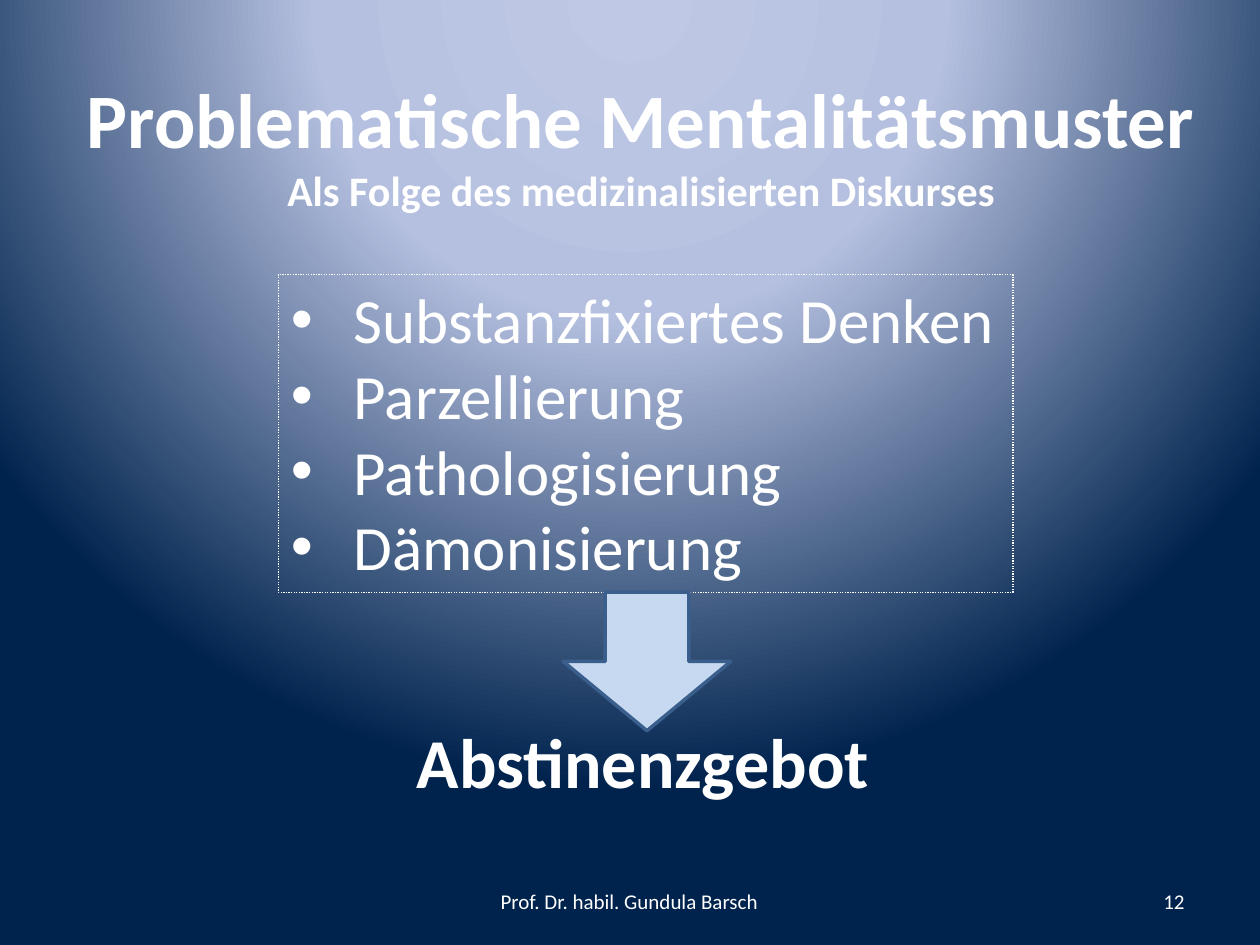
from pptx import Presentation
from pptx.dml.color import RGBColor
from pptx.enum.dml import MSO_LINE_DASH_STYLE as Dash
from pptx.enum.shapes import MSO_SHAPE as Shape
from pptx.enum.text import MSO_ANCHOR as Anchor, MSO_AUTO_SIZE as Fit, PP_ALIGN as Align
from pptx.oxml import parse_xml
from pptx.oxml.ns import nsdecls, qn
from pptx.util import Pt

PX = 9144  # 100 px to the inch
WHITE = RGBColor(0xFF, 0xFF, 0xFF)
PALE = RGBColor(0xC6, 0xD9, 0xF1)
EDGE = RGBColor(0x3A, 0x5F, 0x8C)
GLOW = [
    (0, RGBColor(0xBF, 0xC9, 0xE5)),
    (40, RGBColor(0xB5, 0xC0, 0xE0)),
    (100, RGBColor(0x00, 0x23, 0x4D)),
]
ITEMS = ["Substanzfixiertes Denken", "Parzellierung", "Pathologisierung", "Dämonisierung"]


def emu(box):
    return [n * PX for n in box]


def add_back(slide):
    """Radial glow that starts above the top edge."""
    slide.background.fill.solid()
    props = slide.element.find(".//" + qn("p:bgPr"))
    stops = "".join(
        f'<a:gs pos="{pos * 1000}"><a:srgbClr val="{color}"/></a:gs>' for pos, color in GLOW
    )
    grad = parse_xml(
        f'<a:gradFill {nsdecls("a")} rotWithShape="1"><a:gsLst>{stops}</a:gsLst>'
        '<a:path path="circle"><a:fillToRect l="50000" t="-80000" r="50000" b="180000"/>'
        "</a:path></a:gradFill>"
    )
    props.replace(props.find(qn("a:solidFill")), grad)


def set_lines(frame, lines):
    """Write lines given as (text, size, bold, alignment)."""
    for i, (text, size, bold, align) in enumerate(lines):
        para = frame.add_paragraph() if i else frame.paragraphs[0]
        para.text = text
        para.alignment = align
        font = para.runs[0].font
        font.name, font.size, font.bold = "Calibri", Pt(size), bold
        font.color.rgb = WHITE


def add_text(slide, box, lines, wrap=False, anchor=Anchor.TOP):
    frame = slide.shapes.add_textbox(*emu(box)).text_frame
    frame.word_wrap = wrap
    frame.auto_size = Fit.NONE if wrap else Fit.SHAPE_TO_FIT_TEXT
    frame.vertical_anchor = anchor
    set_lines(frame, lines)


def add_list(slide, box):
    """Bulleted list in a dotted frame."""
    shape = slide.shapes.add_shape(Shape.RECTANGLE, *emu(box))
    shape.shadow.inherit = False
    shape.fill.background()
    shape.line.color.rgb = WHITE
    shape.line.width = Pt(0.75)
    shape.line.dash_style = Dash.ROUND_DOT
    frame = shape.text_frame
    frame.word_wrap = False
    frame.auto_size = Fit.SHAPE_TO_FIT_TEXT
    frame.vertical_anchor = Anchor.TOP
    set_lines(frame, [(item, 36, False, Align.LEFT) for item in ITEMS])
    for para in frame.paragraphs:
        props = para._p.get_or_add_pPr()
        props.set("marL", str(50 * PX))
        props.set("indent", str(-50 * PX))
        props.append(parse_xml(f'<a:buFont {nsdecls("a")} typeface="Arial"/>'))
        props.append(parse_xml(f'<a:buChar {nsdecls("a")} char="•"/>'))


def add_arrow(slide, box):
    shape = slide.shapes.add_shape(Shape.DOWN_ARROW, *emu(box))
    shape.shadow.inherit = False
    shape.fill.solid()
    shape.fill.fore_color.rgb = PALE
    shape.line.color.rgb = EDGE
    shape.line.width = Pt(2)


def add_foot(slide, box):
    """Author in the middle, page number at the right."""
    left, top, width, height = box
    mid, num = 317, 233
    author = (left + (width - mid) // 2, top, mid, height)
    page = (left + width - num, top, num, height)
    for part, text, align in (
        (author, "Prof. Dr. habil. Gundula Barsch", Align.CENTER),
        (page, "12", Align.RIGHT),
    ):
        add_text(slide, part, [(text, 12, False, align)], True, Anchor.MIDDLE)


def main():
    deck = Presentation()
    deck.slide_width, deck.slide_height = 1000 * PX, 750 * PX
    slide = deck.slides.add_slide(deck.slide_layouts[6])
    add_back(slide)
    add_foot(slide, (50, 695, 900, 40))
    add_list(slide, (221, 218, 583, 252))
    # Heading
    add_text(slide, (59, 52, 908, 125), [
        ("Problematische Mentalitätsmuster", 44, True, Align.LEFT),
        ("Als Folge des medizinalisierten Diskurses", 24, True, Align.CENTER),
    ])
    # Conclusion
    add_text(slide, (321, 565, 384, 77), [("Abstinenzgebot", 40, True, Align.LEFT)])
    add_arrow(slide, (447, 470, 133, 110))
    deck.save("out.pptx")


if __name__ == "__main__":
    main()
